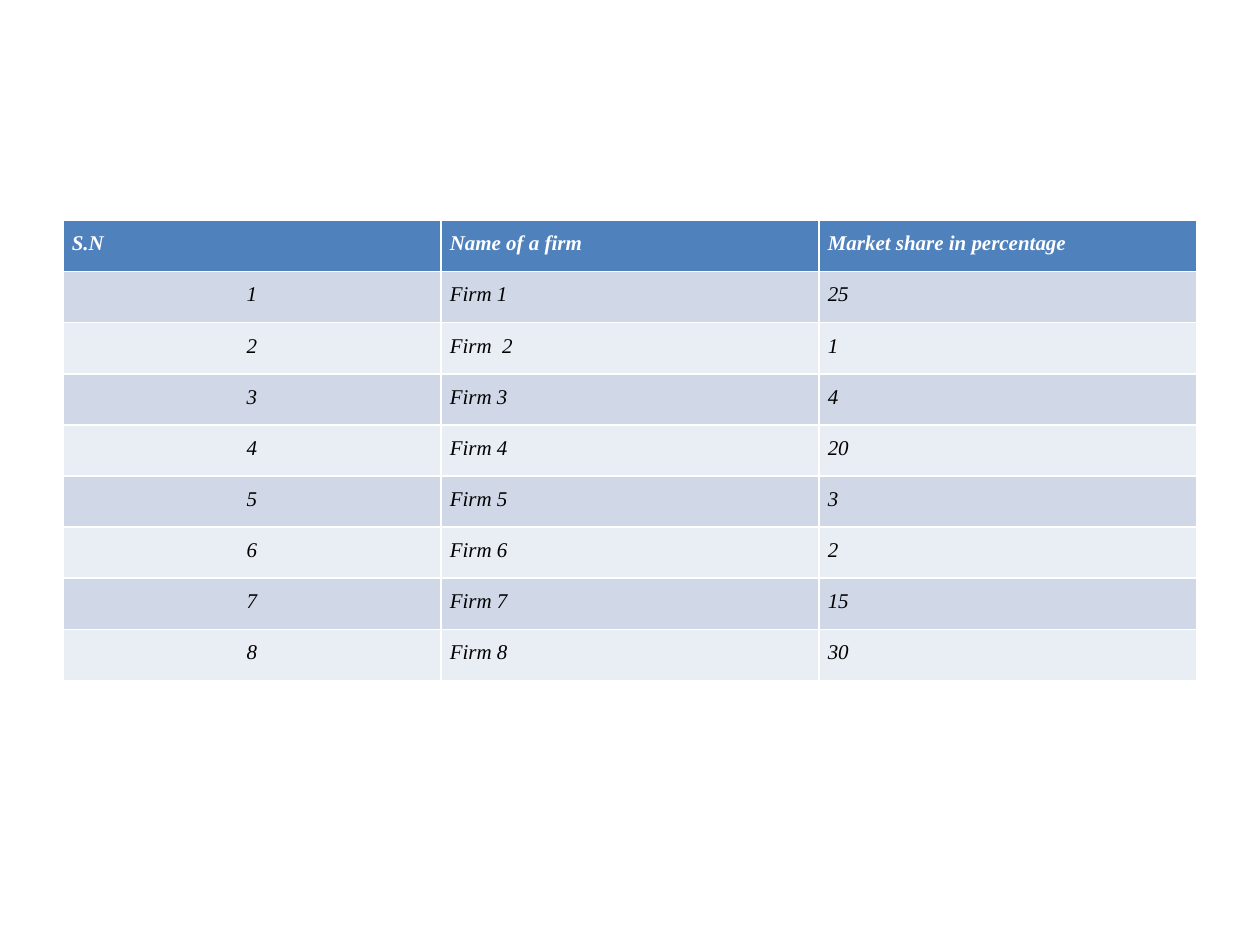
from pptx import Presentation
from pptx.dml.color import RGBColor
from pptx.enum.text import PP_ALIGN
from pptx.util import Inches, Pt


def paint(fill, color):
    fill.solid()
    fill.fore_color.rgb = RGBColor.from_string(color)


# Slide
deck = Presentation()
deck.slide_width, deck.slide_height = Inches(10), Inches(7.5)
slide = deck.slides.add_slide(deck.slide_layouts[6])

# Market shares by firm
rows = [
    ("S.N", "Name of a firm ", "Market share in percentage "),
    ("1", "Firm 1", "25"),
    ("2", "Firm  2", "1"),
    ("3", "Firm 3", "4"),
    ("4", "Firm 4", "20"),
    ("5", "Firm 5", "3"),
    ("6", "Firm 6", "2"),
    ("7", "Firm 7", "15"),
    ("8", "Firm 8", "30"),
]
bands = ("E9EDF4", "D0D8E8")

# Table: equal rows and columns, white rules from the default table style
wide, high = deck.slide_width, deck.slide_height
left, top = int(wide * 0.05), int(high * 7 / 30)
table = slide.shapes.add_table(
    len(rows), 3, left, top, wide - 2 * left, Inches(3.65)).table

for r, row in enumerate(rows):
    head = r == 0
    for c, text in enumerate(row):
        cell = table.cell(r, c)
        paint(cell.fill, "4F81BD" if head else bands[r % 2])
        cell.margin_left = cell.margin_right = Inches(0.07)
        cell.margin_top = cell.margin_bottom = 0

        # Numbers centred, names of the last three firms left, the rest justified
        para = cell.text_frame.paragraphs[0]
        para.line_spacing = 1.5
        if c == 0 and not head:
            para.alignment = PP_ALIGN.CENTER
        elif c == 1 and r > 5:
            para.alignment = PP_ALIGN.LEFT
        else:
            para.alignment = PP_ALIGN.JUSTIFY

        run = para.add_run()
        run.text = text
        font = run.font
        font.name, font.size = "Times New Roman", Pt(12)
        font.bold, font.italic = head, True
        paint(font.fill, "FFFFFF" if head else "000000")

deck.save("out.pptx")
